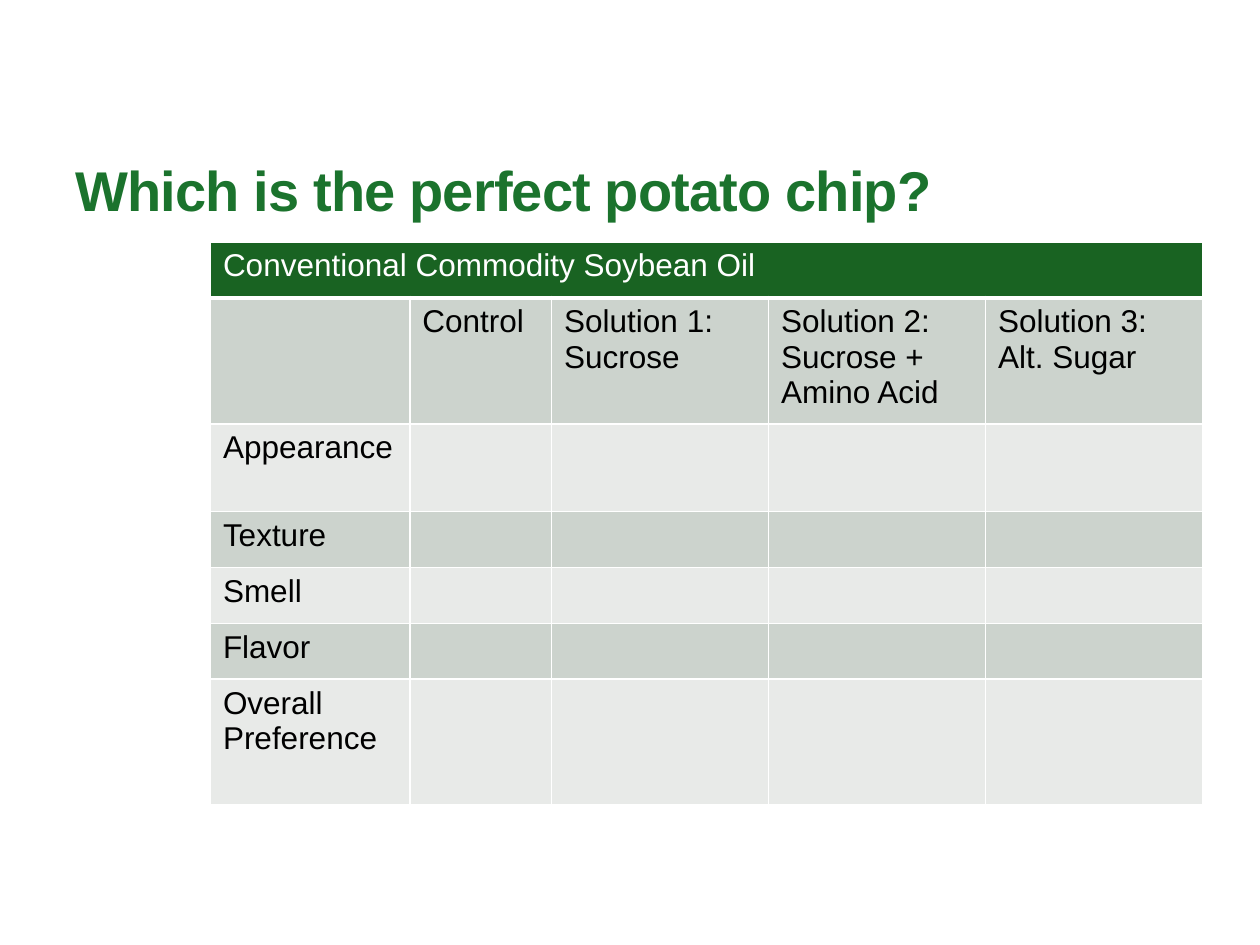
from pptx import Presentation
from pptx.dml.color import RGBColor as RGB
from pptx.enum.text import MSO_ANCHOR as Anchor, PP_ALIGN as Align
from pptx.oxml.ns import qn
from pptx.util import Pt
from lxml.etree import SubElement as Sub

# Content: one list of paragraphs per cell
TITLE = "Which is the perfect potato chip?"
ROWS = [
    [["Conventional Commodity Soybean Oil"]],
    [[], ["Control"], ["Solution 1: Sucrose"],
     ["Solution 2:", "Sucrose + Amino Acid"], ["Solution 3:", "Alt. Sugar"]],
    [["Appearance"]],
    [["Texture"]],
    [["Smell"]],
    [["Flavor"]],
    [["Overall Preference"]],
]

# Sizes in points
WIDTHS = [114, 81, 124, 124, 124]
HEIGHTS = [32, 72, 50, 32, 32, 32, 72]
LEFT, TOP = 120.25, 138.25

THEME = {
    "font": "Arial", "title": 32, "body": 18,
    "green": "1B732D", "head": "196322", "bands": ["E8EAE8", "CCD3CD"],
    "white": "FFFFFF", "black": "000000",
}


def style(font, size, color, bold=False):
    font.name = THEME["font"]
    font.size = Pt(size)
    font.bold = bold
    font.color.rgb = RGB.from_string(color)


def edge(cell, low):
    """Draw white cell borders; low is the width of the bottom one."""
    props = cell._tc.get_or_add_tcPr()
    for side, width in [("L", 1), ("R", 1), ("T", 1), ("B", low)]:
        line = Sub(props, qn("a:ln" + side), w=str(Pt(width)))
        fill = Sub(line, qn("a:solidFill"))
        Sub(fill, qn("a:srgbClr"), val=THEME["white"])


def write(cell, lines, color):
    frame = cell.text_frame
    for i, line in enumerate(lines):
        para = frame.add_paragraph() if i else frame.paragraphs[0]
        run = para.add_run()
        run.text = line
        style(run.font, THEME["body"], color)


def add_title(slide):
    box = slide.shapes.title
    box.left, box.top, box.width, box.height = Pt(36), Pt(72), Pt(648), Pt(72)
    frame = box.text_frame
    frame.vertical_anchor = Anchor.MIDDLE
    para = frame.paragraphs[0]
    para.alignment = Align.LEFT
    run = para.add_run()
    run.text = TITLE
    style(run.font, THEME["title"], THEME["green"], True)
    run._r.get_or_add_rPr().set("spc", "-50")


def add_grid(slide):
    table = slide.shapes.add_table(
        len(HEIGHTS), len(WIDTHS), Pt(LEFT), Pt(TOP),
        Pt(sum(WIDTHS)), Pt(sum(HEIGHTS))).table
    for col, width in zip(table.columns, WIDTHS):
        col.width = Pt(width)
    for row, height in zip(table.rows, HEIGHTS):
        row.height = Pt(height)
    table.cell(0, 0).merge(table.cell(0, len(WIDTHS) - 1))

    # Header row, then alternating bands
    for r, texts in enumerate(ROWS):
        head = r == 0
        shade = THEME["head"] if head else THEME["bands"][r % 2]
        color = THEME["white"] if head else THEME["black"]
        for c in range(len(WIDTHS)):
            cell = table.cell(r, c)
            edge(cell, 3 if head else 1)
            cell.fill.solid()
            cell.fill.fore_color.rgb = RGB.from_string(shade)
            if c < len(texts):
                write(cell, texts[c], color)


def main():
    deck = Presentation()
    deck.slide_width, deck.slide_height = Pt(720), Pt(540)
    slide = deck.slides.add_slide(deck.slide_layouts[5])
    add_title(slide)
    add_grid(slide)
    deck.save("out.pptx")


if __name__ == "__main__":
    main()
